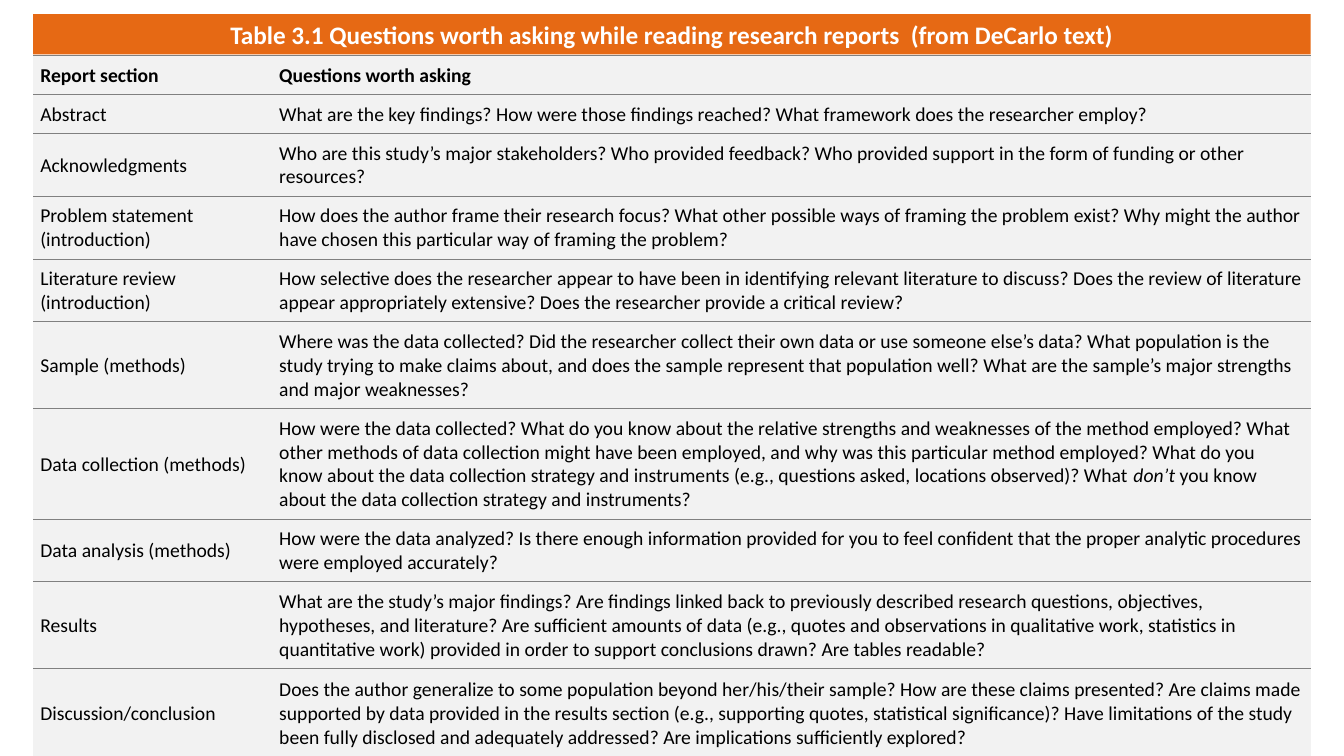
from lxml import etree
from pptx import Presentation
from pptx.dml.color import RGBColor
from pptx.enum.shapes import MSO_SHAPE
from pptx.enum.text import MSO_ANCHOR, PP_ALIGN
from pptx.oxml.ns import qn
from pptx.util import Inches, Pt

RECTANGLE = MSO_SHAPE.RECTANGLE
MIDDLE = MSO_ANCHOR.MIDDLE
CENTER = PP_ALIGN.CENTER

COLORS = {
    "banner": "E66914",
    "banner_text": "FFFFFF",
    "cell": "F2F2F2",
    "text": "000000",
    "rule": "808080",
}
FONT = "Calibri"
PLAIN_TABLE_STYLE = "{2D5ABB26-0587-4C30-8999-92F81FD0307C}"
LEFT, WIDTH = 0.33, 12.67
COLUMN_WIDTHS = [2.37, 10.3]

TITLE = "Table 3.1 Questions worth asking while reading research reports  (from DeCarlo text)"
ITALIC_WORD = "don’t "
ROWS = [
    (0.27, "Report section", "Questions worth asking"),
    (0.37, "Abstract",
     "What are the key findings? How were those findings reached? "
     "What framework does the researcher employ?"),
    (0.51, "Acknowledgments",
     "Who are this study’s major stakeholders? Who provided feedback? "
     "Who provided support in the form of funding or other resources?"),
    (0.6, "Problem statement (introduction)",
     "How does the author frame their research focus? What other possible ways of framing "
     "the problem exist? Why might the author have chosen this particular way of framing the problem?"),
    (0.6, "Literature review\n(introduction)",
     "How selective does the researcher appear to have been in identifying relevant literature "
     "to discuss? Does the review of literature appear appropriately extensive? "
     "Does the researcher provide a critical review?"),
    (0.83, "Sample (methods)",
     "Where was the data collected? Did the researcher collect their own data or use someone "
     "else’s data? What population is the study trying to make claims about, and does the sample "
     "represent that population well? What are the sample’s major strengths and major weaknesses?"),
    (1.06, "Data collection (methods)",
     "How were the data collected? What do you know about the relative strengths and weaknesses "
     "of the method employed? What other methods of data collection might have been employed, and "
     "why was this particular method employed? What do you know about the data collection strategy "
     "and instruments (e.g., questions asked, locations observed)? What don’t you know about the "
     "data collection strategy and instruments?"),
    (0.6, "Data analysis (methods)",
     "How were the data analyzed? Is there enough information provided for you to feel confident "
     "that the proper analytic procedures were employed accurately?"),
    (0.83, "Results",
     "What are the study’s major findings? Are findings linked back to previously described "
     "research questions, objectives, hypotheses, and literature? Are sufficient amounts of data "
     "(e.g., quotes and observations in qualitative work, statistics in quantitative work) provided "
     "in order to support conclusions drawn? Are tables readable?"),
    (0.89, "Discussion/conclusion",
     "Does the author generalize to some population beyond her/his/their sample? How are these "
     "claims presented? Are claims made supported by data provided in the results section (e.g., "
     "supporting quotes, statistical significance)? Have limitations of the study been fully "
     "disclosed and adequately addressed? Are implications sufficiently explored?"),
]


def color(name):
    return RGBColor.from_string(COLORS[name])


def style_font(paragraph, size, color_name, bold):
    font = paragraph.font
    font.name = FONT
    font.size = Pt(size)
    font.bold = bold
    font.color.rgb = color(color_name)


def add_banner(slide):
    banner = slide.shapes.add_shape(
        RECTANGLE, Inches(LEFT), Inches(0.14), Inches(WIDTH), Inches(0.4))
    banner.shadow.inherit = False
    banner.fill.solid()
    banner.fill.fore_color.rgb = color("banner")
    banner.line.fill.background()
    banner.text_frame.word_wrap = True
    banner.text_frame.vertical_anchor = MIDDLE
    paragraph = banner.text_frame.paragraphs[0]
    paragraph.text = TITLE
    paragraph.alignment = CENTER
    style_font(paragraph, 18, "banner_text", True)


def add_rule(cell, tag):
    line = etree.Element(qn(tag), w=str(Pt(0.75)))
    fill = etree.SubElement(line, qn("a:solidFill"))
    etree.SubElement(fill, qn("a:srgbClr"), val=COLORS["rule"])
    cell._tc.get_or_add_tcPr().insert(0, line)


def write_text(paragraph, text):
    before, italic, after = text.partition(ITALIC_WORD)
    for index, line in enumerate(before.split("\n")):
        if index:
            paragraph.add_line_break()
        paragraph.add_run().text = line
    if italic:
        run = paragraph.add_run()
        run.text = italic
        run.font.italic = True
        paragraph.add_run().text = after


def fill_cell(cell, text, is_header, is_last):
    cell.margin_left = cell.margin_right = cell.margin_bottom = Inches(0.07)
    cell.margin_top = Inches(0.08)
    cell.vertical_anchor = MIDDLE
    cell.fill.solid()
    cell.fill.fore_color.rgb = color("cell")
    if not is_last:
        add_rule(cell, "a:lnB")
    add_rule(cell, "a:lnT")
    paragraph = cell.text_frame.paragraphs[0]
    write_text(paragraph, text)
    style_font(paragraph, 14, "text", is_header)


def add_question_table(slide):
    table = slide.shapes.add_table(
        len(ROWS), len(COLUMN_WIDTHS), Inches(LEFT), Inches(0.55),
        Inches(WIDTH), Inches(6.88)).table
    table.first_row = False
    table.horz_banding = False
    table._tbl.tblPr.find(qn("a:tableStyleId")).text = PLAIN_TABLE_STYLE
    for column, width in zip(table.columns, COLUMN_WIDTHS):
        column.width = Inches(width)
    for index, (height, *texts) in enumerate(ROWS):
        row = table.rows[index]
        row.height = Inches(height)
        for cell, text in zip(row.cells, texts):
            fill_cell(cell, text, index == 0, index == len(ROWS) - 1)


def main():
    presentation = Presentation()
    presentation.slide_width = Inches(13.33)
    presentation.slide_height = Inches(7.5)
    slide = presentation.slides.add_slide(presentation.slide_layouts[6])
    add_question_table(slide)
    add_banner(slide)
    presentation.save("out.pptx")


if __name__ == "__main__":
    main()
